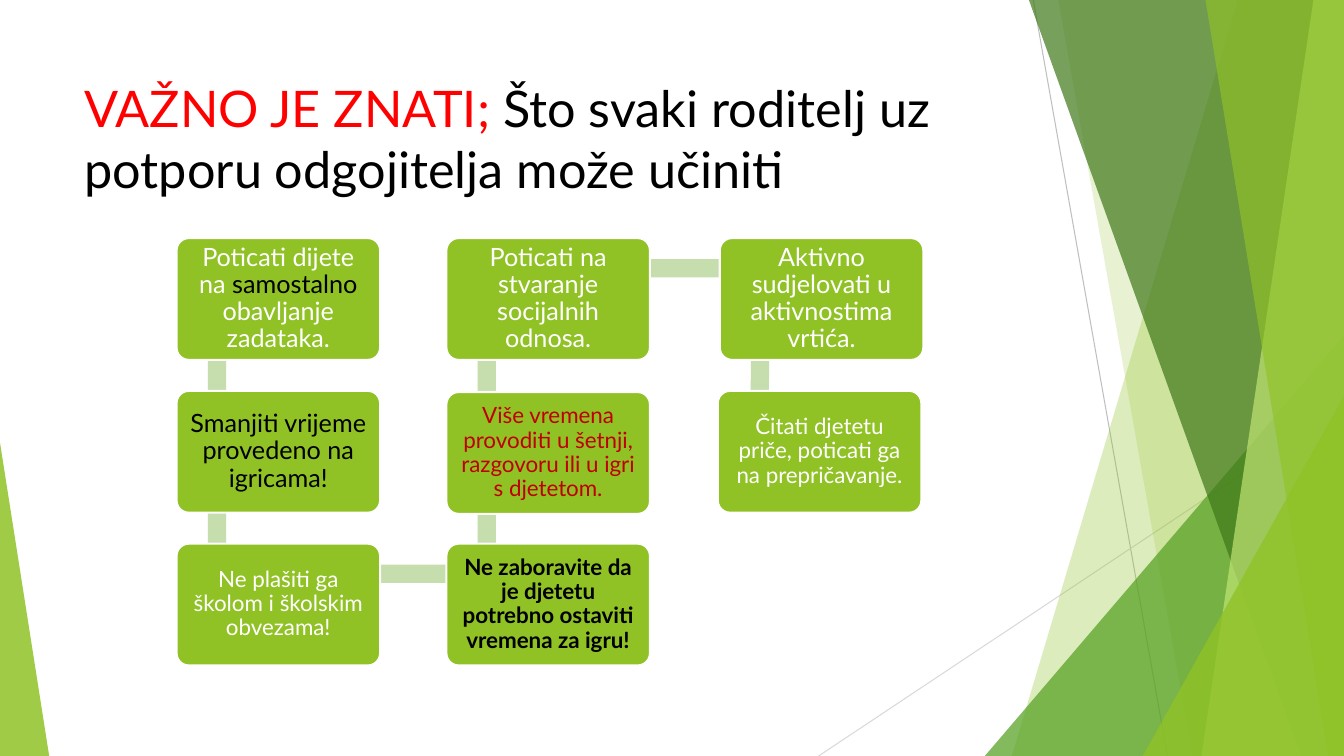
from dataclasses import dataclass

import pptx
import pptx.dml.color
import pptx.enum.shapes
import pptx.enum.text
import pptx.oxml
import pptx.oxml.ns
import pptx.util
from pptx.util import Cm

SHAPES = pptx.enum.shapes.MSO_SHAPE
ALIGN = pptx.enum.text.PP_ALIGN
ANCHOR = pptx.enum.text.MSO_ANCHOR

FONT = "Lato"
GREEN, PALE, WHITE, BLACK = "90C226", "C6DDAD", "FFFFFF", "000000"
PAGE_WIDTH, PAGE_HEIGHT = 33.87, 19.05
COLUMNS = (4.45, 11.25, 18.14)
ROW_TOP, ROW_STEP = 6.0, 3.85
BOX_WIDTH, BOX_HEIGHT = 5.13, 3.07
BAR_THICKNESS = 0.46


@dataclass(frozen=True)
class Span:
    text: str
    color: str = WHITE
    bold: bool = False


@dataclass(frozen=True)
class Step:
    column: int
    row: int
    spans: tuple[Span, ...]
    size: int = 16
    shift_x: float = 0
    shift_y: float = 0


@dataclass(frozen=True)
class Bar:
    """A link that leaves the box at column and row, down or to the right."""
    column: int
    row: int
    down: bool = True
    tilt: float = 0


@dataclass(frozen=True)
class Band:
    """A full-height facet: x of its top left, top right, bottom right and bottom left."""
    corners: tuple[float, float, float, float]
    color: str
    opacity: int


@dataclass(frozen=True)
class Triangle:
    left: float
    top: float
    width: float
    peak: float
    color: str
    opacity: int


FACETS = (
    Band((31.19, PAGE_WIDTH, PAGE_WIDTH, 25.5), GREEN, 30),
    Band((26.67, PAGE_WIDTH, PAGE_WIDTH, 30.05), GREEN, 20),
    Triangle(24.82, 8.46, 9.05, 1, "54A021", 72),
    Band((25.93, PAGE_WIDTH, PAGE_WIDTH, 32.79), "3F7819", 70),
    Band((33.1, PAGE_WIDTH, PAGE_WIDTH, 30.28), "C0E474", 70),
    Band((30.38, PAGE_WIDTH, PAGE_WIDTH, 33.48), GREEN, 65),
    Triangle(28.8, 9.98, 5.07, 1, GREEN, 80),
    Triangle(0, 11.15, 1.24, 0, GREEN, 85),
)

BARS = (
    Bar(0, 0), Bar(0, 1), Bar(0, 2, down=False),
    Bar(1, 1), Bar(1, 0), Bar(1, 0, down=False), Bar(2, 0, tilt=0.7),
)

STEPS = (
    Step(0, 0, (Span("Poticati dijete na"), Span(" samostalno", BLACK),
                Span(" obavljanje zadataka.")), size=18),
    Step(0, 1, (Span("Smanjiti vrijeme provedeno na igricama!", BLACK),), size=18),
    Step(0, 2, (Span("Ne plašiti ga školom i školskim obvezama!"),)),
    Step(1, 2, (Span("Ne zaboravite da je djetetu potrebno ostaviti vremena za igru!",
                     BLACK, bold=True),)),
    Step(1, 1, (Span("Više vremena provoditi u šetnji, razgovoru ili u igri s djetetom.",
                     "C00000"),), shift_y=0.03),
    Step(1, 0, (Span("Poticati na stvaranje socijalnih odnosa."),), size=18),
    Step(2, 0, (Span("Aktivno sudjelovati u aktivnostima vrtića."),), size=18),
    Step(2, 1, (Span("Čitati djetetu priče, poticati ga na prepričavanje."),),
         shift_x=-0.05),
)

TITLE = (Span("VAŽNO JE ZNATI;", "FF0000"),
         Span(" Što svaki roditelj uz potporu odgojitelja može učiniti", BLACK))


def rgb(color: str) -> pptx.dml.color.RGBColor:
    return pptx.dml.color.RGBColor.from_string(color)


def paint(shape, color: str, opacity: int = 100, outline: str | None = None) -> None:
    shape.shadow.inherit = False
    shape.fill.solid()
    shape.fill.fore_color.rgb = rgb(color)
    if opacity < 100:
        tone = shape.fill._xPr.find(".//" + pptx.oxml.ns.qn("a:srgbClr"))
        alpha = pptx.oxml.parse_xml(
            f'<a:alpha {pptx.oxml.ns.nsdecls("a")} val="{opacity * 1000}"/>')
        tone.append(alpha)
    if outline:
        shape.line.color.rgb = rgb(outline)
        shape.line.width = pptx.util.Pt(1.5)
    else:
        shape.line.fill.background()


def write(shape, spans: tuple[Span, ...], *, size: int, align=ALIGN.LEFT,
          anchor=ANCHOR.TOP, spacing: float = 1.0, inset: float = 0.25) -> None:
    frame = shape.text_frame
    frame.word_wrap = True
    frame.vertical_anchor = anchor
    frame.margin_left = frame.margin_right = Cm(inset)
    frame.margin_top = frame.margin_bottom = Cm(inset)
    para = frame.paragraphs[0]
    para.alignment = align
    para.line_spacing = spacing
    for span in spans:
        run = para.add_run()
        run.text = span.text
        run.font.name = FONT
        run.font.size = pptx.util.Pt(size)
        run.font.bold = span.bold
        run.font.color.rgb = rgb(span.color)


def draw_line(page, start: tuple[float, float], end: tuple[float, float],
              color: str) -> None:
    line = page.shapes.add_connector(pptx.enum.shapes.MSO_CONNECTOR.STRAIGHT,
                                     *map(Cm, start + end))
    line.line.color.rgb = rgb(color)
    line.line.width = pptx.util.Pt(0.75)
    line._element.spPr.append(
        pptx.oxml.parse_xml(f'<a:effectLst {pptx.oxml.ns.nsdecls("a")}/>'))


def draw_facet(page, facet: Band | Triangle) -> None:
    if isinstance(facet, Band):
        heights = (0, 0, PAGE_HEIGHT, PAGE_HEIGHT)
        points = [(Cm(x), Cm(y)) for x, y in zip(facet.corners, heights)]
        builder = page.shapes.build_freeform(*points[0])
        builder.add_line_segments(points[1:], close=True)
        shape = builder.convert_to_shape()
    else:
        shape = page.shapes.add_shape(
            SHAPES.ISOSCELES_TRIANGLE, Cm(facet.left), Cm(facet.top),
            Cm(facet.width), Cm(PAGE_HEIGHT - facet.top))
        shape.adjustments[0] = facet.peak
    paint(shape, facet.color, facet.opacity)


def draw_bar(page, bar: Bar) -> None:
    left, top = COLUMNS[bar.column], ROW_TOP + bar.row * ROW_STEP
    if bar.down:
        bounds = (left + 0.79, top + 0.77, BAR_THICKNESS, ROW_STEP)
    else:
        bounds = (left + 1.04, top + 0.53, 6.83, BAR_THICKNESS)
    shape = page.shapes.add_shape(SHAPES.RECTANGLE, *map(Cm, bounds))
    shape.rotation = bar.tilt
    paint(shape, PALE)


def draw_step(page, step: Step) -> None:
    box = page.shapes.add_shape(
        SHAPES.ROUNDED_RECTANGLE,
        Cm(COLUMNS[step.column] + step.shift_x),
        Cm(ROW_TOP + step.row * ROW_STEP + step.shift_y),
        Cm(BOX_WIDTH), Cm(BOX_HEIGHT))
    box.adjustments[0] = 0.1
    paint(box, GREEN, outline=WHITE)
    write(box, step.spans, size=step.size, align=ALIGN.CENTER,
          anchor=ANCHOR.MIDDLE, spacing=0.9, inset=0.18)


def main() -> None:
    deck = pptx.Presentation()
    deck.slide_width, deck.slide_height = Cm(PAGE_WIDTH), Cm(PAGE_HEIGHT)
    page = deck.slides.add_slide(deck.slide_layouts[6])

    draw_line(page, (26.04, 0), (29.42, PAGE_HEIGHT), "BFBFBF")
    draw_line(page, (PAGE_WIDTH, 10.24), (20.63, PAGE_HEIGHT), "D9D9D9")
    for facet in FACETS:
        draw_facet(page, facet)

    title = page.shapes.add_textbox(Cm(1.88), Cm(1.7), Cm(23.88), Cm(3.66))
    write(title, TITLE, size=36)

    for bar in BARS:
        draw_bar(page, bar)
    for step in STEPS:
        draw_step(page, step)
    deck.save("out.pptx")


if __name__ == "__main__":
    main()
